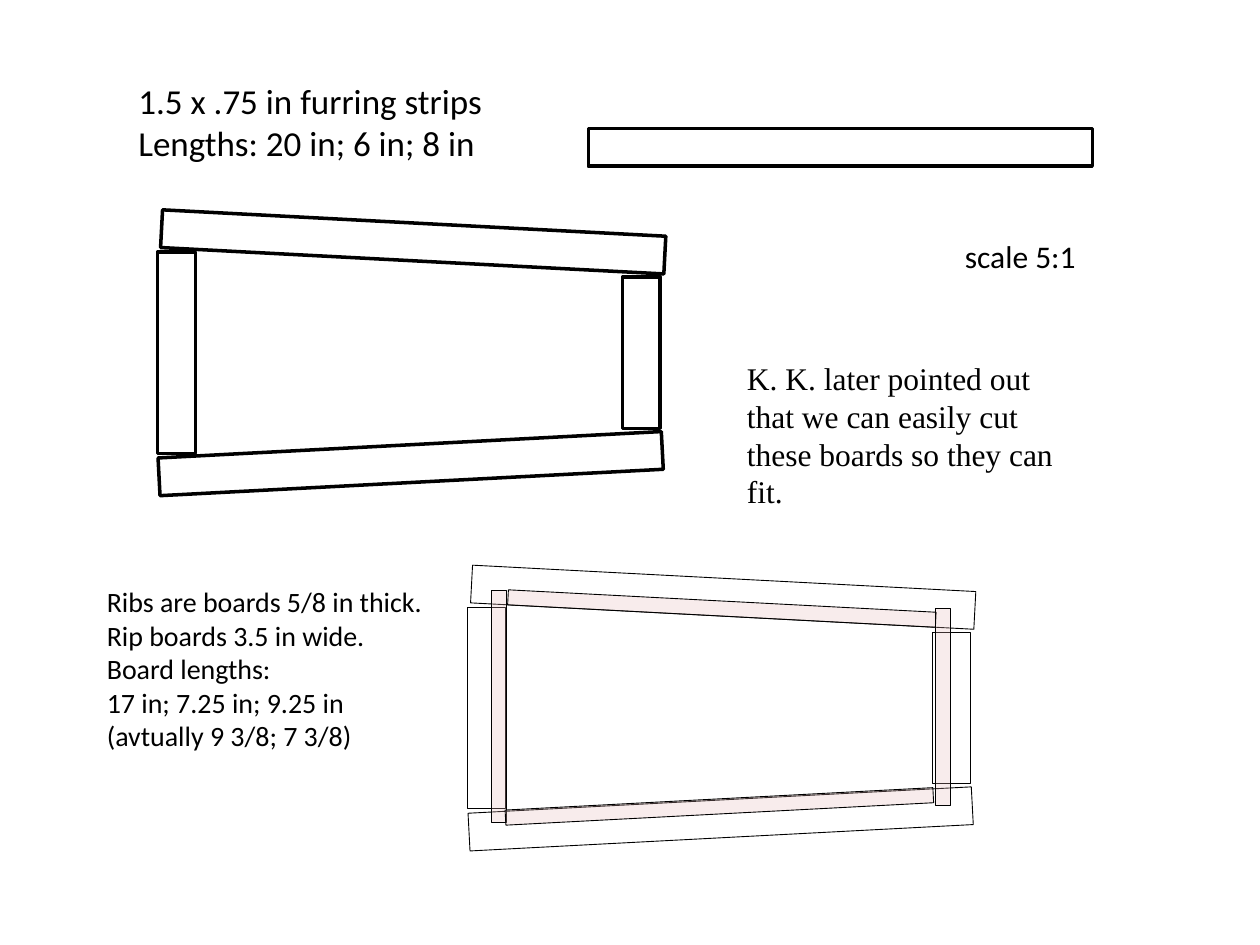
"""Build the slide of furring strip frames and rib boards."""
from lxml.etree import SubElement
from pptx import Presentation
from pptx.dml.color import RGBColor
from pptx.enum.shapes import MSO_SHAPE as Shape
from pptx.oxml.ns import qn
from pptx.util import Pt

PX = 9144
BLACK = RGBColor(0x00, 0x00, 0x00)
ROSE = RGBColor(0xE6, 0xB9, 0xB8)
STRIP_WIDTH, RIB_WIDTH = 30, 12


def add_board(slide, left, top, length, width, angle, line_width, fill=None):
    board = slide.shapes.add_shape(Shape.RECTANGLE, left * PX, top * PX, length * PX, width * PX)
    board.rotation = angle
    board.shadow.inherit = False
    board.line.color.rgb = BLACK
    board.line.width = Pt(line_width)
    if fill is None:
        board.fill.background()
    else:
        board.fill.solid()
        board.fill.fore_color.rgb = fill
        color = board.fill._xPr.find(qn("a:solidFill"))[0]
        SubElement(color, qn("a:alpha")).set("val", "26000")


def add_note(slide, left, top, width, height, text, size, font="Calibri"):
    box = slide.shapes.add_textbox(left * PX, top * PX, width * PX, height * PX)
    frame = box.text_frame
    frame.word_wrap = True
    frame.text = text
    for paragraph in frame.paragraphs:
        paragraph.font.size = Pt(size)
        paragraph.font.name = font
        paragraph.font.color.rgb = BLACK


presentation = Presentation()
presentation.slide_width = 1000 * PX
presentation.slide_height = 750 * PX
slide = presentation.slides.add_slide(presentation.slide_layouts[6])

add_board(slide, 467, 102, 400, STRIP_WIDTH, 0, 2)

frame_strips = [
    (60, 265, 160, 90),
    (449, 265, 120, 90),
    (128, 177, 400, 3),
    (126, 353, 400, 357),
]
for dx, dy, line_width in [(0, 0, 2), (246, 282, 0.5)]:
    for left, top, length, angle in frame_strips:
        add_board(slide, left + dx, top + dy, length, STRIP_WIDTH, angle, line_width)

ribs = [
    (304, 555, 184, 90),
    (403, 477, 340, 3),
    (401, 634, 340, 357),
    (670, 555, 156, 90),
]
for left, top, length, angle in ribs:
    add_board(slide, left, top, length, RIB_WIDTH, angle, 0.5, ROSE)

add_note(slide, 100, 58, 333, 77, "1.5 x .75 in furring strips\nLengths: 20 in; 6 in; 8 in", 20)
add_note(
    slide, 75, 459, 283, 182,
    "Ribs are boards 5/8 in thick.\vRip boards 3.5 in wide.\vBoard lengths:\n"
    "17 in; 7.25 in; 9.25 in\n(avtually 9 3/8; 7 3/8)",
    16,
)
add_note(slide, 756, 183, 110, 40, "scale 5:1", 18)
add_note(
    slide, 583, 280, 275, 131,
    "K. K. later pointed out that we can easily cut these boards so they can fit.",
    18, "Times New Roman",
)

presentation.save("out.pptx")
